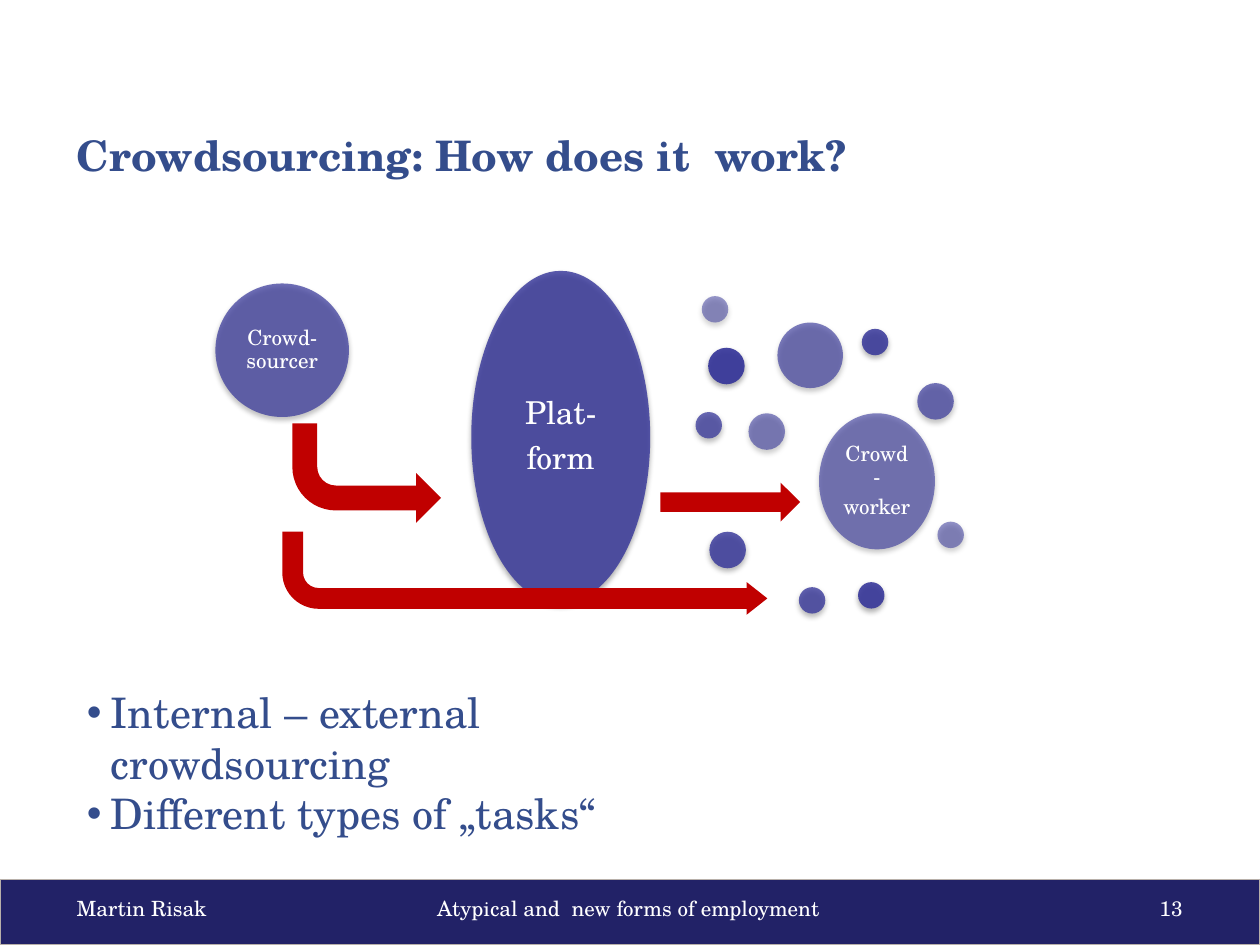
from collections import namedtuple
from math import sqrt

from lxml.etree import SubElement as Sub
from pptx import Presentation
from pptx.dml.color import RGBColor
from pptx.enum.shapes import MSO_SHAPE as Kind
from pptx.enum.text import MSO_ANCHOR as Anchor
from pptx.enum.text import MSO_AUTO_SIZE as Fit
from pptx.enum.text import PP_ALIGN as Align
from pptx.oxml.ns import qn
from pptx.util import Inches, Pt

FONT = "TeX Gyre Schola"
NAVY = RGBColor(0x22, 0x22, 0x67)
BLUE = RGBColor(0x34, 0x4D, 0x8C)
VIOLET = RGBColor(0x33, 0x33, 0x99)
RED = RGBColor(0xC0, 0x00, 0x00)
GREY = RGBColor(0xB8, 0xB0, 0xAA)
WHITE = RGBColor(0xFF, 0xFF, 0xFF)

Box = namedtuple("Box", "x y w h")
BUBBLES = [
    (3.91, 0.61, 0.29, 0.29, None),
    (5.10, 2.47, 0.21, 0.21, None),
    (5.13, 0.46, 0.21, 0.21, None),
    (3.92, 2.07, 0.29, 0.29, None),
    (4.63, 2.51, 0.21, 0.21, None),
    (3.81, 1.12, 0.21, 0.21, None),
    (0.00, 0.10, 1.06, 1.06, "Crowd-sourcer"),
    (5.57, 0.89, 0.29, 0.29, None),
    (4.46, 0.41, 0.52, 0.52, None),
    (4.79, 1.13, 0.92, 1.08, "Crowd-\nworker"),
    (4.23, 1.13, 0.29, 0.29, None),
    (5.73, 1.99, 0.21, 0.21, None),
    (3.86, 0.20, 0.21, 0.21, None),
]


def inner(box, x, y, w, h):
    return Box(box.x + x, box.y + y, w, h)


def place(shape, box):
    shape.left, shape.top, shape.width, shape.height = map(Inches, box)


def write(shape, text, size=12, color=WHITE, bold=False, align=Align.LEFT,
          anchor=Anchor.TOP, pad=None, lead=1.0, after=0, tabs=(), bullet=None):
    frame = shape.text_frame
    frame.word_wrap = True
    frame.auto_size = Fit.NONE
    frame.vertical_anchor = anchor
    if pad is not None:
        frame.margin_left = frame.margin_right = Inches(pad)
        frame.margin_top = frame.margin_bottom = Inches(pad)
    frame.text = text
    for para in frame.paragraphs:
        props = para._p.get_or_add_pPr()
        if bullet:
            props.set("marL", str(Inches(0.19)))
            props.set("indent", str(-Inches(0.19)))
            Sub(props, qn("a:buChar"), char=bullet)
        if tabs:
            stops = Sub(props, qn("a:tabLst"))
            for pos, algn in tabs:
                Sub(stops, qn("a:tab"), pos=str(Inches(pos)), algn=algn)
        para.alignment = align
        para.line_spacing = lead
        para.space_before, para.space_after = Pt(0), Pt(after)
        for run in para.runs:
            font = run.font
            font.name, font.size, font.bold = FONT, Pt(size), bold
            font.color.rgb = color


def draw(slide, kind, box, fill, line=None):
    shape = slide.shapes.add_shape(kind, *map(Inches, box))
    shape.shadow.inherit = False
    shape.fill.solid()
    shape.fill.fore_color.rgb = fill
    if line is None:
        shape.line.fill.background()
    else:
        shape.line.color.rgb, shape.line.width = line, Pt(0.75)
    return shape


def shade(parent, percent):
    Sub(parent, qn("a:alpha"), val=str(round(percent * 1000)))


def bubble(slide, box, alpha, text=None, size=12, pad=0.05, dark=35):
    shape = draw(slide, Kind.OVAL, box, VIOLET)
    props = shape._element.spPr
    shade(props.find(qn("a:solidFill"))[0], alpha)
    cast = Sub(props.find(qn("a:effectLst")), qn("a:outerShdw"),
               blurRad=str(Pt(3.1)), dist=str(Pt(1.8)), dir="5400000",
               rotWithShape="0")
    shade(Sub(cast, qn("a:srgbClr"), val="000000"), dark)
    if text:
        w, h = box.w / sqrt(2), box.h / sqrt(2)
        area = inner(box, (box.w - w) / 2, (box.h - h) / 2, w, h)
        label = slide.shapes.add_textbox(*map(Inches, area))
        write(label, text, size=size, align=Align.CENTER, anchor=Anchor.MIDDLE,
              pad=pad, lead=0.9, after=size * 0.35)


def bend(slide, box, curve=None):
    arrow = draw(slide, Kind.BENT_ARROW, box, RED)
    arrow._element.spPr.find(qn("a:xfrm")).set("flipV", "1")
    if curve:
        arrow.adjustments[1] = curve


def title(slide, box):
    shape = slide.shapes.title
    place(shape, box)
    write(shape, "Crowdsourcing: How does it  work?", size=24, color=BLUE,
          bold=True, anchor=Anchor.MIDDLE)


def flow(slide, box):
    bubble(slide, inner(box, 2.03, 0, 1.42, 2.64), 80, "Plat-\nform",
           size=18, pad=0.07, dark=38)
    step = 40 / (len(BUBBLES) - 1)
    for i, (x, y, w, h, text) in enumerate(BUBBLES):
        bubble(slide, inner(box, x, y, w, h), 90 - i * step, text)


def arrows(slide, box):
    bend(slide, inner(box, 0.61, 1.21, 1.18, 0.79))
    draw(slide, Kind.RIGHT_ARROW, inner(box, 3.53, 1.68, 1.11, 0.31), RED)
    bend(slide, inner(box, 0.53, 2.07, 3.85, 0.66), curve=0.197)


def points(slide, box):
    shape = slide.placeholders[1]
    place(shape, box)
    write(shape, "Internal – external crowdsourcing\nDifferent types of „tasks“",
          size=24, color=BLUE, bullet="•")


def footer(slide, box):
    draw(slide, Kind.RECTANGLE, box, NAVY, GREY)
    area = inner(box, 0.51, 0.08, 9.06, 0.3)
    strip = draw(slide, Kind.RECTANGLE, area, NAVY)
    write(strip, "Martin Risak\tAtypical and  new forms of employment\t13",
          tabs=((4.38, "ctr"), (8.78, "r")))


def main():
    deck = Presentation()
    deck.slide_width, deck.slide_height = Inches(10), Inches(7.5)
    slide = deck.slides.add_slide(deck.slide_layouts[1])
    stage = Box(1.71, 2.15, 5.94, 2.73)
    footer(slide, Box(0, 6.98, 10, 0.52))
    title(slide, Box(0.51, 0.6, 7.16, 1.25))
    flow(slide, stage)
    points(slide, Box(0.59, 5.4, 5.46, 1.3))
    arrows(slide, stage)
    deck.save("out.pptx")


if __name__ == "__main__":
    main()
